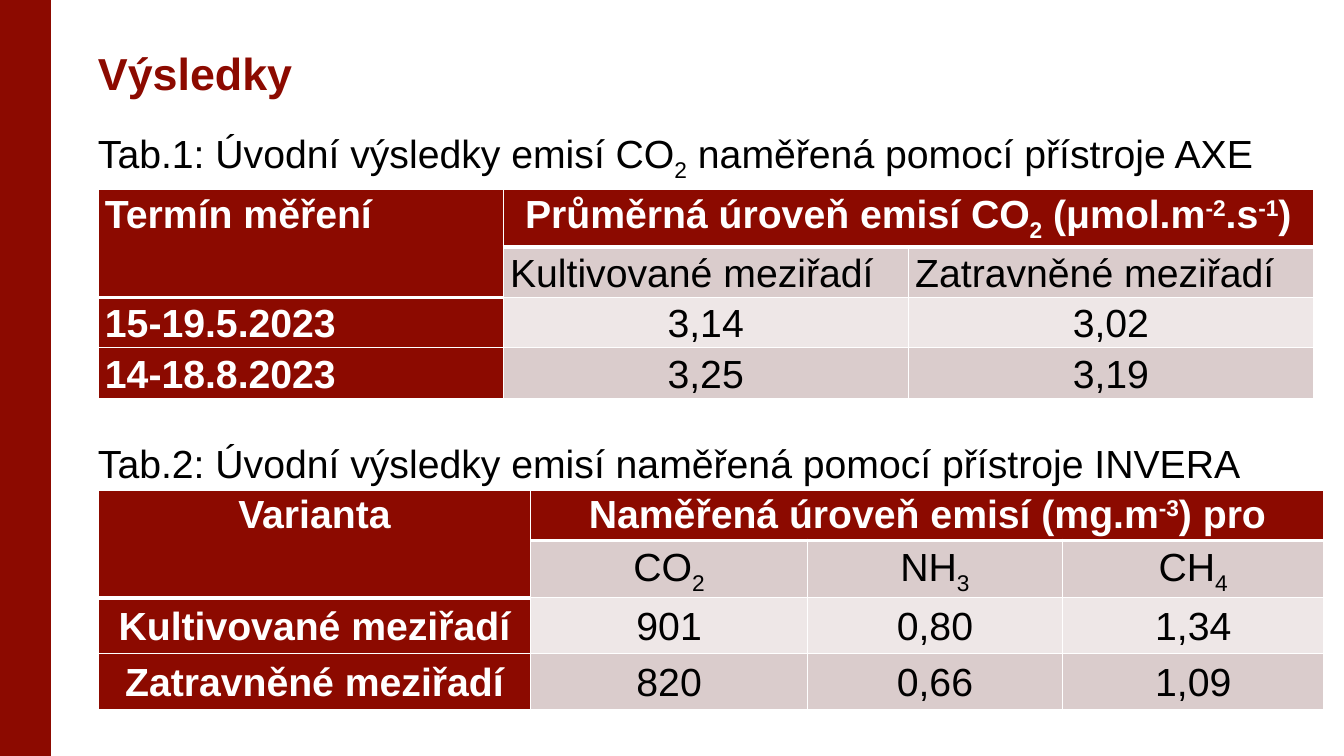
"""Builds the results slide with two emission tables."""
from lxml.etree import SubElement
from pptx import Presentation
from pptx.dml.color import RGBColor
from pptx.enum.shapes import MSO_SHAPE
from pptx.enum.text import MSO_ANCHOR, PP_ALIGN
from pptx.oxml.ns import qn
from pptx.util import Pt

COLORS = {"red": "8C0A00", "white": "FFFFFF", "black": "000000",
          "dark_band": "DACCCC", "light_band": "EEE7E7"}
BASELINES = {"_": "-25000", "^": "30000"}
LEFT = 70
TEXT_WIDTH = 852

DATE_ROWS = [
    ["Termín měření", "Průměrná úroveň emisí CO|_2| (μmol.m|^-2|.s|^-1|)", ""],
    ["", "Kultivované meziřadí", "Zatravněné meziřadí"],
    ["15-19.5.2023", "3,14", "3,02"],
    ["14-18.8.2023", "3,25", "3,19"],
]
VARIANT_ROWS = [
    ["Varianta", "Naměřená úroveň emisí (mg.m|^-3|) pro", "", ""],
    ["", "CO|_2", "NH|_3", "CH|_4"],
    ["Kultivované meziřadí", "901", "0,80", "1,34"],
    ["Zatravněné meziřadí", "820", "0,66", "1,09"],
]


def color(name):
    return RGBColor.from_string(COLORS[name])


def write(p, text, size, color_name, bold=False, align=PP_ALIGN.LEFT):
    p.alignment = align
    p.font.name = "Arial"
    p.font.size = Pt(size)
    p.font.bold = bold
    p.font.color.rgb = color(color_name)
    for part in text.split("|"):
        r = p.add_run()
        r.text = part.lstrip("_^")
        if part[0] in BASELINES:
            r._r.get_or_add_rPr().set("baseline", BASELINES[part[0]])


def clear_frame(tf):
    tf.word_wrap = True
    tf.vertical_anchor = MSO_ANCHOR.TOP
    tf.margin_left = tf.margin_right = tf.margin_top = tf.margin_bottom = 0


def add_side_bar(s, height):
    sp = s.shapes.add_shape(MSO_SHAPE.RECTANGLE, 0, 0, Pt(36.4), height)
    sp.shadow.inherit = False
    sp.fill.solid()
    sp.fill.fore_color.rgb = color("red")
    sp.line.fill.background()


def set_title(s, text):
    sp = s.shapes.title
    sp.left, sp.top, sp.width, sp.height = Pt(LEFT), Pt(32.5), Pt(TEXT_WIDTH), Pt(46)
    clear_frame(sp.text_frame)
    write(sp.text_frame.paragraphs[0], text, 32, "red", bold=True)


def add_caption(s, top, text):
    sp = s.shapes.add_textbox(Pt(LEFT), Pt(top), Pt(TEXT_WIDTH), Pt(34))
    clear_frame(sp.text_frame)
    write(sp.text_frame.paragraphs[0], text, 28, "black")


def set_borders(cell, widths):
    tcPr = cell._tc.get_or_add_tcPr()
    for index, (side, width) in enumerate(widths.items()):
        ln = SubElement(tcPr, qn(f"a:ln{side}"), w=str(Pt(width)))
        fill = SubElement(ln, qn("a:solidFill"))
        SubElement(fill, qn("a:srgbClr"), val=COLORS["white"])
        tcPr.remove(ln)
        tcPr.insert(index, ln)


def format_cell(cell, row, col, text, align):
    is_header = row == 0 or col == 0
    band = "light_band" if row == 2 else "dark_band"
    cell.fill.solid()
    cell.fill.fore_color.rgb = color("red" if is_header else band)
    cell.margin_left = cell.margin_right = Pt(5)
    cell.margin_top = cell.margin_bottom = 0
    cell.vertical_anchor = MSO_ANCHOR.TOP if row == 0 else MSO_ANCHOR.MIDDLE
    header_end = 2 if col == 0 else 1
    ends_header = row == header_end - 1 or cell.is_merge_origin
    set_borders(cell, {"L": 1, "R": 1, "T": 3 if row == header_end else 1,
                       "B": 3 if ends_header else 1})
    p = cell.text_frame.paragraphs[0]
    p.line_spacing = 1.07
    if text:
        write(p, text, 28, "white" if is_header else "black", is_header, align)


def add_emission_table(s, top, rows, widths, heights, justified=()):
    frame = s.shapes.add_table(len(rows), len(widths), Pt(LEFT), Pt(top),
                               Pt(sum(widths)), Pt(sum(heights)))
    table = frame.table
    for column, width in zip(table.columns, widths):
        column.width = Pt(width)
    for table_row, height in zip(table.rows, heights):
        table_row.height = Pt(height)
    table.cell(0, 0).merge(table.cell(1, 0))
    table.cell(0, 1).merge(table.cell(0, len(widths) - 1))
    for row, texts in enumerate(rows):
        for col, text in enumerate(texts):
            align = PP_ALIGN.JUSTIFY if text in justified else PP_ALIGN.CENTER
            format_cell(table.cell(row, col), row, col, text, align)


def main():
    prs = Presentation()
    prs.slide_width, prs.slide_height = Pt(960), Pt(540)
    s = prs.slides.add_slide(prs.slide_layouts[5])
    add_side_bar(s, prs.slide_height)
    set_title(s, "Výsledky")
    add_caption(s, 92.5, "Tab.1: Úvodní výsledky emisí CO|_2| naměřená pomocí přístroje AXE")
    labels = [row[0] for row in DATE_ROWS] + DATE_ROWS[1][1:]
    add_emission_table(s, 135.5, DATE_ROWS, [289.4] * 3, [40.5, 35.7, 35.7, 35.7], labels)
    add_caption(s, 314, "Tab.2: Úvodní výsledky emisí naměřená pomocí přístroje INVERA")
    add_emission_table(s, 350, VARIANT_ROWS, [309.2, 197.6, 182.2, 186.8],
                       [36, 40.5, 40, 40])
    prs.save("out.pptx")


if __name__ == "__main__":
    main()
